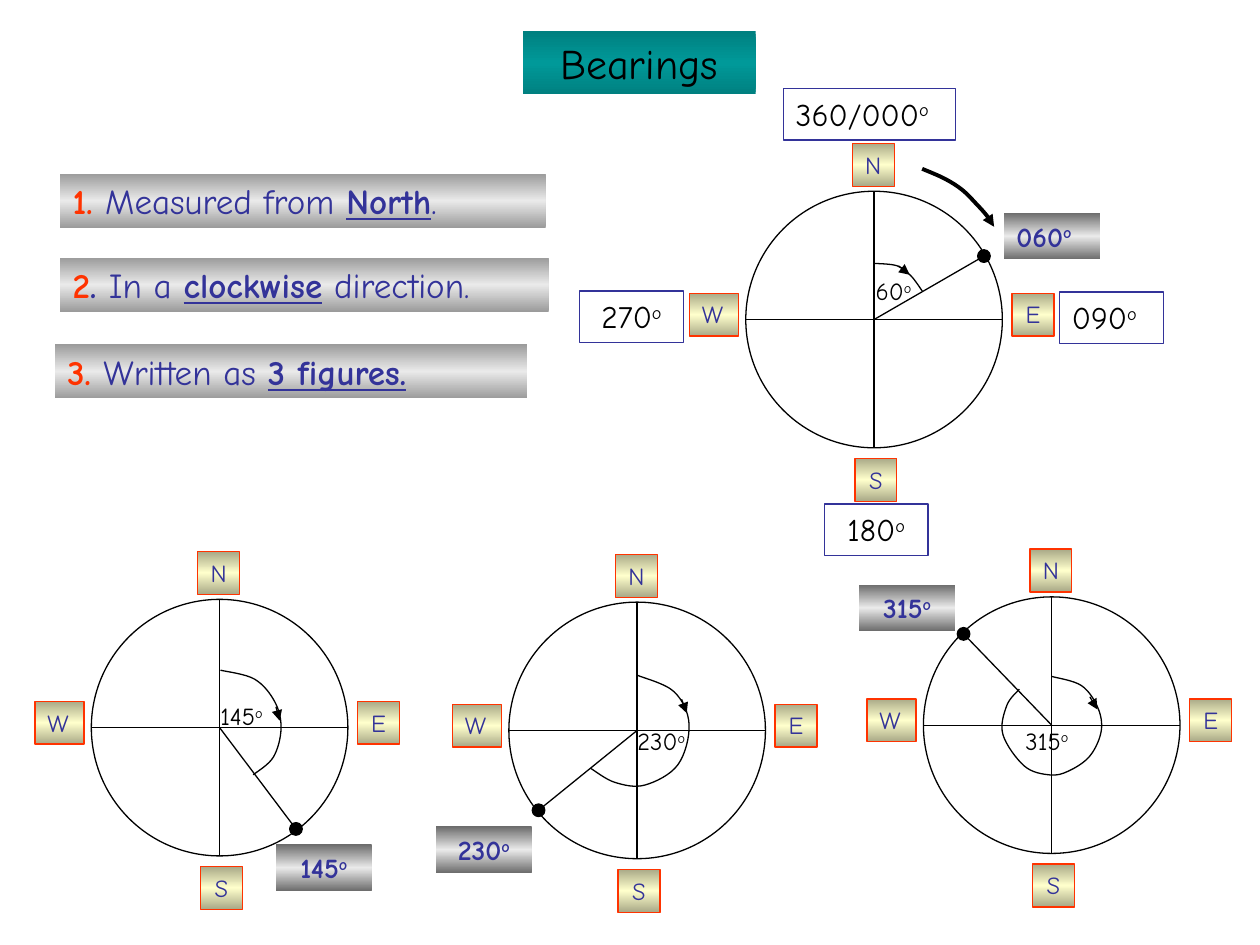
from copy import deepcopy
from math import cos, radians, sin

from lxml import etree
from pptx import Presentation
from pptx import util as u
from pptx.dml import color as c
from pptx.enum import shapes, text
from pptx.oxml import ns

FONT = "Comic Neue"
RADIUS = 73.3
BLACK, NAVY, RED = "000000", "333399", "FF3300"
SILVER, STEEL = ("9B9B9B", "EAEAEA"), ("6C6C6C", "EAEAEA")
CREAM, TEAL = ("A9A987", "FFFFCC"), ("008080", "009999")
DEGREE = ("o", {"raised": True})
CENTER = text.PP_ALIGN.CENTER
LEFT = text.PP_ALIGN.LEFT

RULES = [
    (34.4, 99.2, 277.4, [("1. ", {"color": RED, "bold": True}), "Measured from ",
                         ("North", {"bold": True, "underline": True}), "."]),
    (34.4, 147.2, 279.2, [("2", {"color": RED, "bold": True}), (". ", {"bold": True}), "In a ",
                          ("clockwise", {"bold": True, "underline": True}), " direction."]),
    (31.4, 196.7, 270, [("3. ", {"color": RED, "bold": True}), "Written as ",
                        ("3 figures.", {"bold": True, "underline": True})]),
]

COMPASS_POINTS = [("N", -12.5, -100.6, 24, CENTER), ("S", -11, 79.4, 24, CENTER),
                  ("E", 78.8, -15, 24, CENTER), ("W", -105.5, -15, 28, LEFT)]

DIALS = [
    {"center": (125.5, 415.8), "angle": 143,
     "inner": ("145", 118.8, 397.2), "outer": ("145", 157.7, 482.6, CENTER),
     "arc": [(126, 383), (145.4, 388.1), (157, 401), (160.6, 416.2), (156.2, 432.7),
             (144.7, 442.8)],
     "arrow": (157.7, 403.9, 159.8, 411.8)},
    {"center": (364.1, 417.4), "angle": 231,
     "inner": ("230", 357.1, 411.6), "outer": ("230", 249.1, 472.3, CENTER),
     "arc": [(364.3, 385.9), (385.2, 395.3), (393.8, 414), (387.4, 437), (368.6, 448.6),
             (351.4, 447.1), (337.7, 439.2)],
     "arrow": (389.5, 399.6, 392.4, 407.5)},
    {"center": (601, 414.4), "angle": 316,
     "inner": ("315", 578.9, 411.1), "outer": ("315", 491, 334.1, CENTER),
     "arc": [(601.2, 386.6), (617.8, 391.7), (627.1, 403.9), (629.3, 417.6), (622.8, 432),
             (610.6, 440.6), (599.8, 442.8), (585.4, 437.8), (573.1, 419.8), (575.3, 403.2),
             (582.5, 393.8)],
     "arrow": (622.8, 398.2, 627.1, 405.4)},
    {"center": (499.5, 182.6), "angle": 60,
     "inner": ("60", 493.2, 154.1), "outer": ("060", 573.8, 121.7, LEFT),
     "arc": [(499.7, 150.5), (512.6, 151.9), (520.6, 157.7), (527, 166.3)],
     "arrow": (513.4, 151.9, 519.8, 157)},
]

QUARTERS = [("090", 605.5, 166.8, 59.4, LEFT), ("360/000", 447.6, 50.6, 98.6, LEFT),
            ("270", 331.2, 166.3, 59.4, CENTER), ("180", 471, 288, 59.4, CENTER)]

CLOCKWISE = [(527, 96.5), (540, 102.2), (550.1, 108.7), (558, 116.6), (563.8, 123.1),
             (568.1, 129.6)]


def rgb(value):
    return c.RGBColor.from_string(value)


def paint(shape, fill):
    if fill is None:
        shape.fill.background()
    elif isinstance(fill, str):
        shape.fill.solid()
        shape.fill.fore_color.rgb = rgb(fill)
    else:
        edge, middle = fill
        shape.fill.gradient()
        shape.fill.gradient_angle = 270
        stop_list = shape._element.spPr.find(".//" + ns.qn("a:gsLst"))
        stop_list.append(deepcopy(stop_list[0]))
        for stop, position, value in zip(shape.fill.gradient_stops, (0, 0.5, 1),
                                         (edge, middle, edge)):
            stop.position = position
            stop.color.rgb = rgb(value)


def outline(shape, color, width=0.75, arrow=False):
    if color is None:
        shape.line.fill.background()
        return
    shape.line.color.rgb = rgb(color)
    shape.line.width = u.Pt(width)
    if arrow:
        etree.SubElement(shape.line._get_or_add_ln(), ns.qn("a:tailEnd"), type="triangle")


def write(shape, runs, size=14, color=NAVY, bold=False, align=LEFT):
    frame = shape.text_frame
    frame.word_wrap = True
    frame.vertical_anchor = text.MSO_ANCHOR.TOP
    paragraph = frame.paragraphs[0]
    paragraph.alignment = align
    for item in runs:
        words, special = (item, {}) if isinstance(item, str) else item
        run = paragraph.add_run()
        run.text = words
        run.font.name = FONT
        run.font.size = u.Pt(size)
        run.font.bold = special.get("bold", bold)
        run.font.underline = special.get("underline", False)
        run.font.color.rgb = rgb(special.get("color", color))
        if special.get("raised"):
            run.font._element.set("baseline", "30000")


def add_box(slide, left, top, width, height, fill=None, line=None,
            kind=shapes.MSO_SHAPE.RECTANGLE):
    shape = slide.shapes.add_shape(kind, u.Pt(left), u.Pt(top), u.Pt(width), u.Pt(height))
    shape.shadow.inherit = False
    paint(shape, fill)
    outline(shape, line)
    return shape


def add_circle(slide, x, y, radius, fill=None):
    add_box(slide, x - radius, y - radius, 2 * radius, 2 * radius, fill, BLACK,
            shapes.MSO_SHAPE.OVAL)


def add_line(slide, x1, y1, x2, y2, arrow=False):
    line = slide.shapes.add_connector(shapes.MSO_CONNECTOR.STRAIGHT,
                                      u.Pt(x1), u.Pt(y1), u.Pt(x2), u.Pt(y2))
    outline(line, BLACK, arrow=arrow)
    etree.SubElement(line._element.spPr, ns.qn("a:effectLst"))


def bend(curve, points):
    origin = [min(axis) for axis in zip(*points)]
    padded = [points[0], *points, points[-1]]
    segments = curve._element.spPr.findall(".//" + ns.qn("a:lnTo"))
    for segment, before, start, end, after in zip(segments, padded, padded[1:], padded[2:],
                                                  padded[3:]):
        leaving = [s + (e - b) / 6 for b, s, e in zip(before, start, end)]
        arriving = [e - (a - s) / 6 for s, e, a in zip(start, end, after)]
        cubic = etree.Element(ns.qn("a:cubicBezTo"))
        for point in (leaving, arriving, end):
            x, y = (round(value - zero) for value, zero in zip(point, origin))
            etree.SubElement(cubic, ns.qn("a:pt"), x=str(x), y=str(y))
        segment.getparent().replace(segment, cubic)


def add_curve(slide, knots, width=0.75, arrow=False):
    points = [(u.Pt(x), u.Pt(y)) for x, y in knots]
    builder = slide.shapes.build_freeform(*points[0])
    builder.add_line_segments(points[1:], close=False)
    curve = builder.convert_to_shape()
    bend(curve, points)
    curve.shadow.inherit = False
    paint(curve, None)
    outline(curve, BLACK, width, arrow)


def add_dial(slide, center, angle, inner, outer, arc, arrow):
    x, y = center
    add_circle(slide, x, y, RADIUS)
    add_line(slide, x - RADIUS, y, x + RADIUS, y)
    add_line(slide, x, y + RADIUS, x, y - RADIUS)
    for letter, dx, dy, width, align in COMPASS_POINTS:
        box = add_box(slide, x + dx, y + dy, width, 24.5, CREAM, RED)
        write(box, [letter], align=align)

    end_x = x + (RADIUS - 0.8) * sin(radians(angle))
    end_y = y - (RADIUS - 0.8) * cos(radians(angle))
    add_line(slide, x, y, end_x, end_y)
    add_circle(slide, end_x, end_y, 3.6, BLACK)
    add_curve(slide, arc)
    add_line(slide, *arrow, arrow=True)

    figure, left, top = inner
    label = slide.shapes.add_textbox(u.Pt(left), u.Pt(top), u.Pt(49), u.Pt(24))
    write(label, [figure, DEGREE], color=BLACK)
    figure, left, top, align = outer
    box = add_box(slide, left, top, 54.7, 26.6, STEEL)
    write(box, [figure, DEGREE], size=16, bold=True, align=align)


def main():
    presentation = Presentation()
    presentation.slide_width, presentation.slide_height = u.Pt(720), u.Pt(540)
    slide = presentation.slides.add_slide(presentation.slide_layouts[6])
    for left, top, width, runs in RULES:
        write(add_box(slide, left, top, width, 31, SILVER), runs, size=20)
    for dial in DIALS:
        add_dial(slide, **dial)
    add_curve(slide, CLOCKWISE, width=2.25, arrow=True)
    title = add_box(slide, 298.6, 18, 133.2, 36, TEAL)
    write(title, ["Bearings"], size=24, color=BLACK, align=CENTER)
    for figure, left, top, width, align in QUARTERS:
        box = add_box(slide, left, top, width, 29.5, line=NAVY)
        write(box, [figure, DEGREE], size=18, color=BLACK, align=align)
    presentation.save("out.pptx")


if __name__ == "__main__":
    main()
